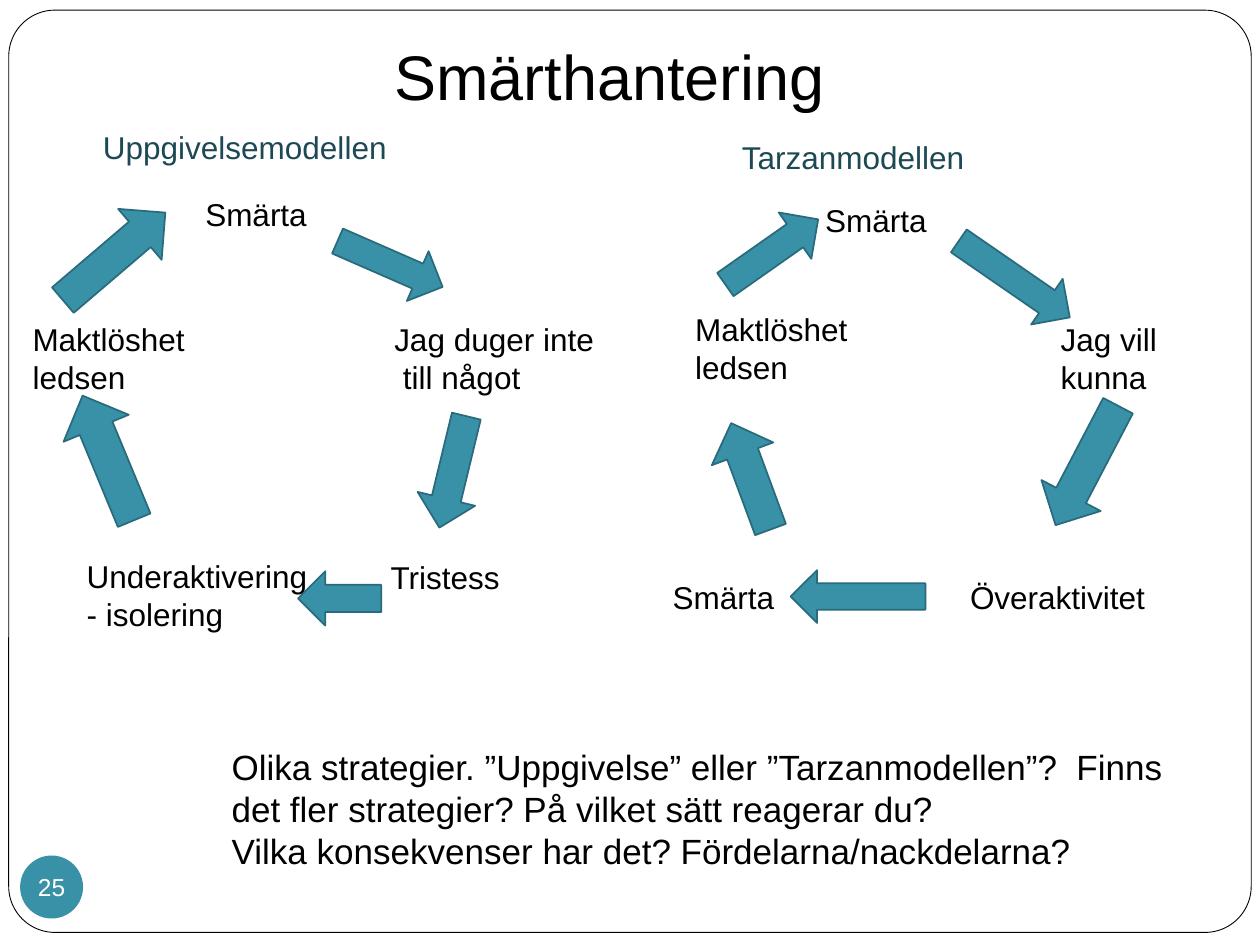
from pptx import Presentation
from pptx.dml.color import RGBColor
from pptx.enum.shapes import MSO_SHAPE as Preset
from pptx.enum.text import MSO_ANCHOR, PP_ALIGN
from pptx.util import Pt

BLACK = RGBColor(0x00, 0x00, 0x00)
WHITE = RGBColor(0xFF, 0xFF, 0xFF)
TEAL = RGBColor(0x38, 0x91, 0xA7)
TEAL_EDGE = RGBColor(0x29, 0x6B, 0x7C)
TEAL_DARK = RGBColor(0x1C, 0x49, 0x54)
FONT = "Arial"
UP, DOWN = Preset.UP_ARROW, Preset.DOWN_ARROW

# Each model: heading, then labels as (text, left, top, width, height)
# and arrows as (preset, left, top, width, height, rotation), in points.
GIVING_UP_MODEL = (
    ("Uppgivelsemodellen", 51.8, 69.8, 189.4, 28.8),
    [
        ("Smärta", 110.2, 108, 73.4, 28.8),
        ("Jag duger inte\v till något", 218.2, 179.3, 130.3, 51.1),
        ("Tristess", 216.1, 315.4, 87.7, 28.8),
        ("Underaktivering\v- isolering", 42.5, 314.6, 141.1, 51.1),
        ("Maktlöshet\nledsen", 11.5, 179.3, 121.7, 51.1),
    ],
    [
        (DOWN, 207.4, 118.1, 31, 65.5, 293.6),
        (DOWN, 241.9, 236.9, 33.8, 65.5, 13.6),
        (UP, 178.6, 318.2, 31, 47.5, 270),
        (UP, 41.8, 223.2, 40.3, 77, 337.5),
        (UP, 46.1, 108, 38.2, 77, 49.5),
    ],
)
TARZAN_MODEL = (
    ("Tarzanmodellen", 416.9, 75.6, 189.4, 28.8),
    [
        ("Smärta", 464.4, 111.6, 82.8, 28.8),
        ("Jag vill kunna", 599, 179.3, 79.2, 51.1),
        ("Överaktivitet", 547.2, 326.9, 118.8, 28.8),
        ("Smärta", 377.3, 326.9, 104.4, 28.8),
        ("Maktlöshet\nledsen", 390.2, 173.5, 139.7, 51.1),
    ],
    [
        (DOWN, 563.8, 121, 31.7, 77, 304.6),
        (DOWN, 601.9, 227.5, 38.2, 77, 27.6),
        (DOWN, 475.2, 302.4, 30.2, 77, 90),
        (UP, 410.4, 239.8, 37.4, 64.8, 339.7),
        (UP, 424.8, 111.6, 32.4, 64.8, 54.9),
    ],
)


def format_text(text_frame, size, color):
    for paragraph in text_frame.paragraphs:
        for run in paragraph.runs:
            run.font.name = FONT
            run.font.size = Pt(size)
            run.font.color.rgb = color


def add_text(slide, text, left, top, width, height, size=18, color=BLACK):
    box = slide.shapes.add_textbox(Pt(left), Pt(top), Pt(width), Pt(height))
    box.text_frame.word_wrap = True
    box.text_frame.text = text
    format_text(box.text_frame, size, color)


def add_shape(slide, preset, left, top, width, height, fill, line=None, line_width=1):
    shape = slide.shapes.add_shape(preset, Pt(left), Pt(top), Pt(width), Pt(height))
    shape.shadow.inherit = False
    shape.fill.solid()
    shape.fill.fore_color.rgb = fill
    if line is None:
        shape.line.fill.background()
    else:
        shape.line.color.rgb = line
        shape.line.width = Pt(line_width)
    return shape


def add_frame(slide):
    frame = add_shape(slide, Preset.ROUNDED_RECTANGLE, 5, 5.8, 710, 527, WHITE, BLACK, 0.5)
    frame.adjustments[0] = 0.05


def add_page_number(slide, number):
    badge = add_shape(slide, Preset.OVAL, 11.5, 488.9, 36, 36, TEAL)
    text_frame = badge.text_frame
    text_frame.margin_left = text_frame.margin_right = 0
    text_frame.margin_top = text_frame.margin_bottom = 0
    text_frame.vertical_anchor = MSO_ANCHOR.MIDDLE
    text_frame.word_wrap = False
    text_frame.text = number
    text_frame.paragraphs[0].alignment = PP_ALIGN.CENTER
    format_text(text_frame, 14, WHITE)


def add_model(slide, heading, labels, arrows):
    """Draw one circle of labels joined by block arrows."""
    for label in labels:
        add_text(slide, *label)
    for *placement, rotation in arrows:
        add_shape(slide, *placement, TEAL, TEAL_EDGE).rotation = rotation
    add_text(slide, *heading, color=TEAL_DARK)


def main():
    presentation = Presentation()
    presentation.slide_width, presentation.slide_height = Pt(720), Pt(540)
    slide = presentation.slides.add_slide(presentation.slide_layouts[6])
    add_frame(slide)
    add_page_number(slide, "25")
    add_text(slide, "Smärthantering", 218.2, 18, 326.9, 51.1, size=36)
    add_text(
        slide,
        "Olika strategier. ”Uppgivelse” eller ”Tarzanmodellen”?  Finns det fler "
        "strategier? På vilket sätt reagerar du?\n"
        "Vilka konsekvenser har det? Fördelarna/nackdelarna?",
        125.3, 422.6, 558.7, 79.9, size=20,
    )
    for model in (GIVING_UP_MODEL, TARZAN_MODEL):
        add_model(slide, *model)
    presentation.save("out.pptx")


if __name__ == "__main__":
    main()
